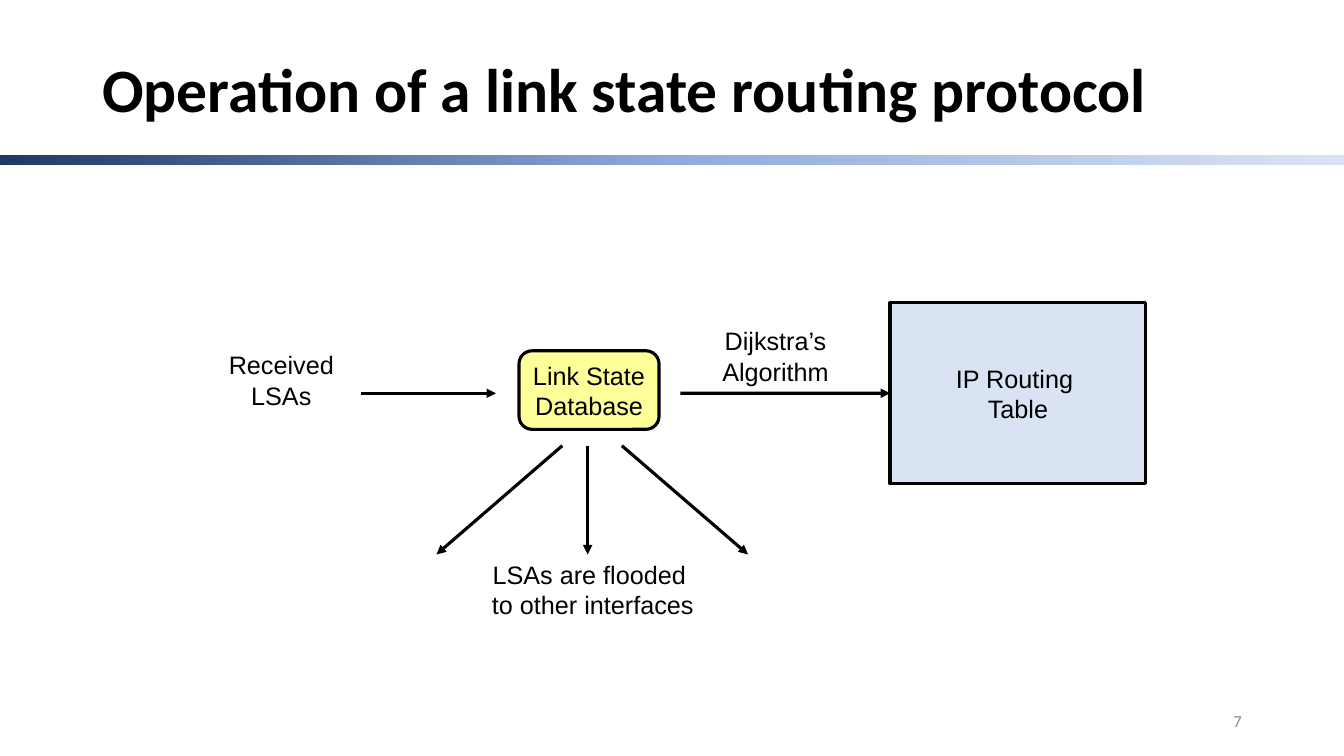
import copy
from dataclasses import dataclass

import pptx
import pptx.dml.color
import pptx.enum.shapes
import pptx.enum.text
import pptx.oxml
import pptx.oxml.ns
import pptx.util

Cm = pptx.util.Cm
Shapes = pptx.enum.shapes.MSO_SHAPE
Align = pptx.enum.text.PP_ALIGN
Anchor = pptx.enum.text.MSO_ANCHOR


@dataclass(frozen=True)
class Theme:
    ink: str = "000000"
    muted: str = "8C8C8C"
    database: str = "FFFF99"
    table: str = "DAE3F3"
    bar: tuple = ("203864", "8FAADC", "DAE3F3")
    heading_font: str = "Calibri"
    body_font: str = "Arial"
    title_size: int = 44
    label_size: int = 18
    number_size: int = 12
    stroke: float = 2.25


@dataclass(frozen=True)
class Box:
    left: float
    top: float
    width: float
    height: float

    def inner(self, left, top, width, height):
        return Box(self.left + left, self.top + top, width, height)

    def lengths(self):
        return Cm(self.left), Cm(self.top), Cm(self.width), Cm(self.height)


THEME = Theme()


def rgb(value):
    return pptx.dml.color.RGBColor.from_string(value)


def write(shape, text, font, size, color=THEME.ink, align=Align.CENTER,
          anchor=Anchor.MIDDLE, bold=False, wrap=False):
    frame = shape.text_frame
    frame.text = text
    frame.word_wrap = wrap
    frame.vertical_anchor = anchor
    for para in frame.paragraphs:
        para.alignment = align
        for span in para.runs:
            span.font.name = font
            span.font.size = pptx.util.Pt(size)
            span.font.bold = bold
            span.font.color.rgb = rgb(color)


def add_label(slide, box, text):
    label = slide.shapes.add_textbox(*box.lengths())
    write(label, text, THEME.body_font, THEME.label_size, anchor=Anchor.TOP)


def add_node(slide, box, kind, fill, text):
    node = slide.shapes.add_shape(kind, *box.lengths())
    node.shadow.inherit = False
    node.fill.solid()
    node.fill.fore_color.rgb = rgb(fill)
    node.line.color.rgb = rgb(THEME.ink)
    node.line.width = pptx.util.Pt(THEME.stroke)
    write(node, text, THEME.body_font, THEME.label_size)
    return node


def add_arrow(slide, box, start, end):
    arrow = slide.shapes.add_connector(
        pptx.enum.shapes.MSO_CONNECTOR.STRAIGHT,
        Cm(box.left + start[0]), Cm(box.top + start[1]),
        Cm(box.left + end[0]), Cm(box.top + end[1]))
    arrow.line.color.rgb = rgb(THEME.ink)
    arrow.line.width = pptx.util.Pt(THEME.stroke)
    head = pptx.oxml.parse_xml(
        f'<a:tailEnd {pptx.oxml.ns.nsdecls("a")} type="triangle"/>')
    arrow.line._get_or_add_ln().append(head)
    effects = pptx.oxml.parse_xml(f'<a:effectLst {pptx.oxml.ns.nsdecls("a")}/>')
    arrow._element.spPr.append(effects)
    return arrow


def add_bar(slide, box):
    bar = slide.shapes.add_shape(Shapes.RECTANGLE, *box.lengths())
    bar.shadow.inherit = False
    bar.line.fill.background()
    bar.fill.gradient()
    bar.fill.gradient_angle = 0
    stop_list = bar._element.spPr.find(".//" + pptx.oxml.ns.qn("a:gsLst"))
    stop_list.insert(1, copy.deepcopy(stop_list[0]))
    for index, stop in enumerate(bar.fill.gradient_stops):
        stop.color.rgb = rgb(THEME.bar[index])
        stop.position = index / 2


def add_header(slide, box):
    add_bar(slide, box.inner(0, 3.91, box.width, 0.25))
    title = slide.shapes.add_textbox(*box.inner(2.33, 1.02, 27.94, 2.64).lengths())
    write(title, "Operation of a link state routing protocol", THEME.heading_font,
          THEME.title_size, align=Align.LEFT, bold=True, wrap=True)
    title.text_frame.paragraphs[0].line_spacing = 0.9


def add_diagram(slide, box):
    axis = 2.28
    flood_top, flood_bottom = 3.6, 6.34
    add_arrow(slide, box, (3.59, axis), (7, axis))
    add_label(slide, box.inner(0, 1.06, 3.18, 1.8), "Received\vLSAs")
    table = add_node(slide, box.inner(16.93, 0, 6.45, 2 * axis), Shapes.RECTANGLE,
                     THEME.table, "IP Routing \vTable")
    add_arrow(slide, box, (11.65, axis), (16.93, axis)).end_connect(table, 1)
    add_label(slide, box.inner(12.43, 0.45, 3.23, 1.8), "Dijkstra’s\nAlgorithm")
    add_node(slide, box.inner(7.58, 1.21, 3.53, 1.98), Shapes.ROUNDED_RECTANGLE,
             THEME.database, "Link State\vDatabase")
    for start, end in ((10.17, 13.35), (8.67, 5.5), (9.31, 9.31)):
        add_arrow(slide, box, (start, flood_top), (end, flood_bottom))
    add_label(slide, box.inner(6.62, flood_bottom, 5.64, 1.8),
              "LSAs are flooded \vto other interfaces")


def add_page_number(slide, box):
    number = slide.shapes.add_textbox(*box.lengths())
    write(number, "7", THEME.heading_font, THEME.number_size, THEME.muted,
          align=Align.RIGHT, wrap=True)


def main():
    deck = pptx.Presentation()
    page = Box(0, 0, 33.87, 19.05)
    deck.slide_width, deck.slide_height = Cm(page.width), Cm(page.height)
    slide = deck.slides.add_slide(deck.slide_layouts[6])
    add_header(slide, page.inner(0, 0, page.width, 4.16))
    add_diagram(slide, page.inner(5.5, 7.63, 23.38, 8.14))
    add_page_number(slide, page.inner(23.93, 17.65, 7.62, 1.02))
    deck.save("out.pptx")


if __name__ == "__main__":
    main()
